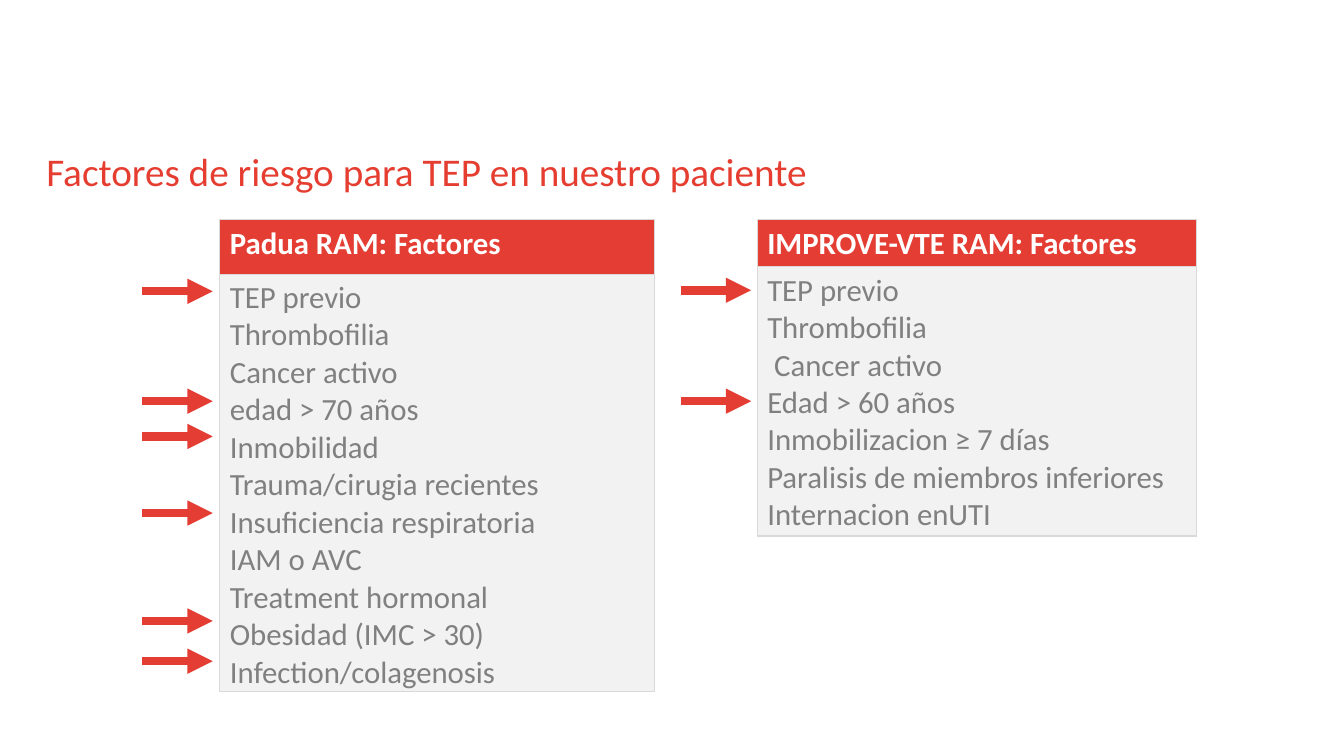
import pptx
import pptx.dml.color
import pptx.enum.shapes
import pptx.enum.text
import pptx.oxml
import pptx.oxml.ns
import pptx.util

Inches = pptx.util.Inches
Pt = pptx.util.Pt
RGBColor = pptx.dml.color.RGBColor

TITLE_RED = RGBColor(0xE5, 0x3E, 0x31)
RED = RGBColor(0xE4, 0x3D, 0x33)
WHITE = RGBColor(0xFF, 0xFF, 0xFF)
GREY = RGBColor(0x80, 0x80, 0x80)
PALE_GREY = RGBColor(0xF2, 0xF2, 0xF2)
BORDER_GREY = RGBColor(0xD9, 0xD9, 0xD9)

PADUA_FACTORS = [
    "TEP previo",
    "Thrombofilia",
    "Cancer activo",
    "edad > 70 años",
    "Inmobilidad",
    "Trauma/cirugia recientes",
    "Insuficiencia respiratoria",
    "IAM o AVC",
    "Treatment hormonal",
    "Obesidad (IMC > 30) Infection/colagenosis",
]
IMPROVE_FACTORS = [
    "TEP previo",
    "Thrombofilia",
    " Cancer activo",
    "Edad > 60 años",
    "Inmobilizacion ≥ 7 días",
    "Paralisis de miembros inferiores",
    "Internacion enUTI",
]
PADUA_ARROWS = [2.89, 3.98, 4.33, 5.09, 6.16, 6.56]
IMPROVE_ARROWS = [2.88, 3.98]


def write_text(frame, lines, size=22, color=GREY, bold=False):
    for index, line in enumerate(lines):
        paragraph = frame.add_paragraph() if index else frame.paragraphs[0]
        run = paragraph.add_run()
        run.text = line
        run.font.name = "Calibri"
        run.font.size = Pt(size)
        run.font.bold = bold
        run.font.color.rgb = color


def add_title(slide, title):
    box = slide.shapes.add_textbox(Inches(0.46), Inches(1.47), Inches(12), Inches(0.46))
    frame = box.text_frame
    frame.word_wrap = True
    frame.vertical_anchor = pptx.enum.text.MSO_ANCHOR.MIDDLE
    frame.margin_left = frame.margin_right = 0
    frame.margin_top = frame.margin_bottom = 0
    write_text(frame, [title], size=28, color=TITLE_RED)


def style_cell(cell, fill):
    cell.fill.solid()
    cell.fill.fore_color.rgb = fill
    properties = cell._tc.get_or_add_tcPr()
    for position, side in enumerate(("lnL", "lnR", "lnT", "lnB")):
        border = pptx.oxml.parse_xml(
            f'<a:{side} {pptx.oxml.ns.nsdecls("a")} w="{Pt(1)}"><a:solidFill>'
            f'<a:srgbClr val="{BORDER_GREY}"/></a:solidFill></a:{side}>'
        )
        properties.insert(position, border)


def add_factor_table(slide, left, width, header_height, body_height, heading, factors):
    table = slide.shapes.add_table(
        2, 1, Inches(left), Inches(2.18), Inches(width), Inches(header_height + body_height)
    ).table
    table.rows[0].height = Inches(header_height)
    table.rows[1].height = Inches(body_height)
    header, body = table.cell(0, 0), table.cell(1, 0)
    style_cell(header, RED)
    style_cell(body, PALE_GREY)
    write_text(header.text_frame, [heading], color=WHITE, bold=True)
    write_text(body.text_frame, factors)


def add_arrow(slide, left, top):
    arrow = slide.shapes.add_connector(
        pptx.enum.shapes.MSO_CONNECTOR.STRAIGHT,
        Inches(left), Inches(top), Inches(left + 0.7), Inches(top),
    )
    arrow.line.color.rgb = RED
    arrow.line.width = Pt(6)
    namespace = pptx.oxml.ns.nsdecls("a")
    arrow.line._get_or_add_ln().append(
        pptx.oxml.parse_xml(f'<a:tailEnd {namespace} type="triangle"/>')
    )
    arrow._element.spPr.append(pptx.oxml.parse_xml(f"<a:effectLst {namespace}/>"))


def main():
    presentation = pptx.Presentation()
    presentation.slide_width = Inches(13.33)
    presentation.slide_height = Inches(7.5)
    slide = presentation.slides.add_slide(presentation.slide_layouts[6])

    add_title(slide, "Factores de riesgo para TEP en nuestro paciente")
    add_factor_table(slide, 2.18, 4.31, 0.54, 4.14, "Padua RAM: Factores", PADUA_FACTORS)
    add_factor_table(slide, 7.51, 4.36, 0.46, 2.67, "IMPROVE-VTE RAM: Factores", IMPROVE_FACTORS)
    for left, tops in ((1.41, PADUA_ARROWS), (6.75, IMPROVE_ARROWS)):
        for top in tops:
            add_arrow(slide, left, top)

    presentation.save("out.pptx")


if __name__ == "__main__":
    main()
